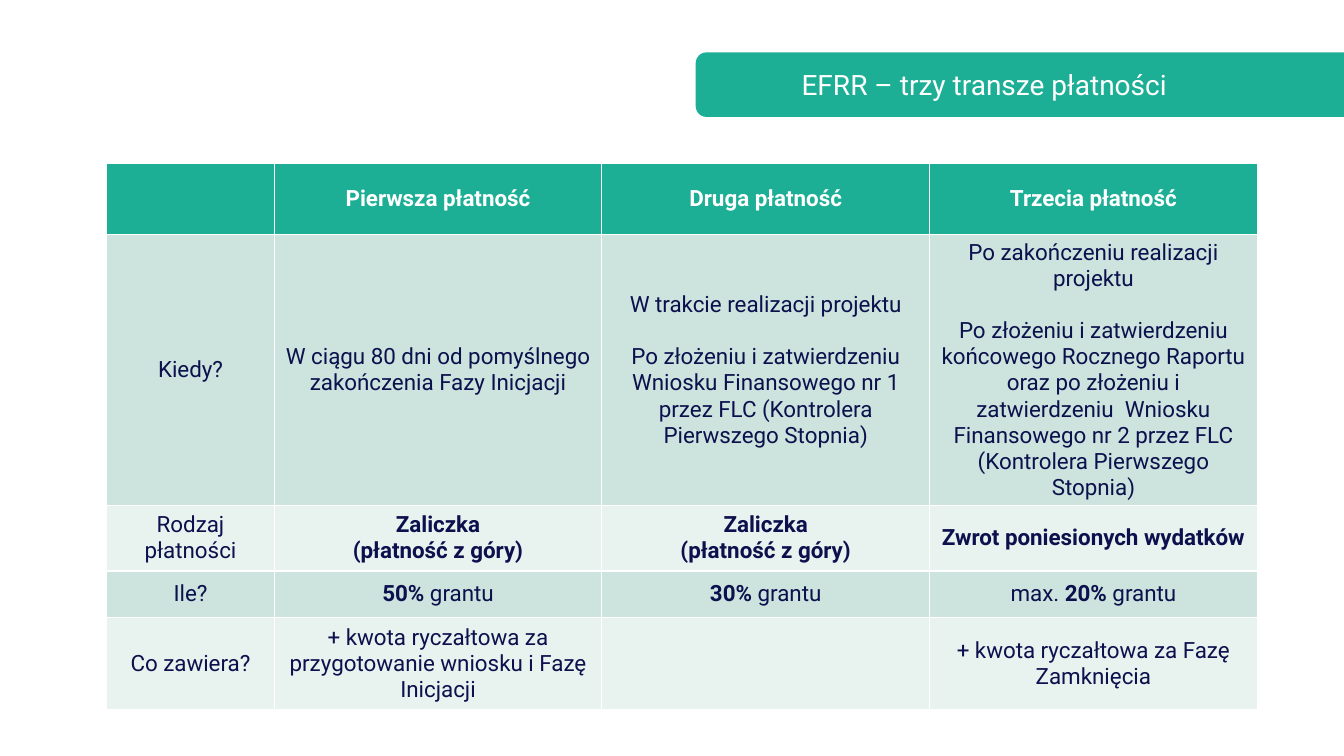
from pptx import Presentation
from pptx.dml.color import RGBColor
from pptx.enum.shapes import MSO_SHAPE
from pptx.enum.text import MSO_ANCHOR, PP_ALIGN
from pptx.util import Inches, Pt

GREEN = RGBColor(0x1C, 0xAF, 0x96)
MINT = RGBColor(0xCD, 0xE3, 0xDD)
PALE = RGBColor(0xE8, 0xF2, 0xEF)
NAVY = RGBColor(0x0C, 0x11, 0x4D)
WHITE = RGBColor(0xFF, 0xFF, 0xFF)
FONT = "Roboto"

TITLE = "EFRR – trzy transze płatności"
COLUMN_WIDTHS = [1.66, 3.25, 3.25, 3.25]
ROW_HEIGHTS = [0.71, 2.67, 0.65, 0.46, 0.92]
ADVANCE = ["**Zaliczka**", "**(płatność z góry)**"]
PARAGRAPH_GAP = Pt(18.75)
ROWS = [
    [[], ["**Pierwsza płatność**"], ["**Druga płatność**"], ["**Trzecia płatność**"]],
    [
        ["Kiedy?"],
        ["W ciągu 80 dni od pomyślnego zakończenia Fazy Inicjacji"],
        [
            "W trakcie realizacji projektu",
            "Po złożeniu i zatwierdzeniu Wniosku Finansowego nr 1 "
            "przez FLC (Kontrolera Pierwszego Stopnia)",
        ],
        [
            "Po zakończeniu realizacji projektu",
            "Po złożeniu i zatwierdzeniu końcowego Rocznego Raportu "
            "oraz po złożeniu i zatwierdzeniu  Wniosku Finansowego nr 2 "
            "przez FLC (Kontrolera Pierwszego Stopnia)",
        ],
    ],
    [["Rodzaj płatności"], ADVANCE, ADVANCE, ["**Zwrot poniesionych wydatków**"]],
    [["Ile?"], ["**50%** grantu"], ["**30%** grantu"], ["max. **20%** grantu"]],
    [
        ["Co zawiera?"],
        ["+ kwota ryczałtowa za przygotowanie wniosku i Fazę Inicjacji"],
        [],
        ["+ kwota ryczałtowa za Fazę Zamknięcia"],
    ],
]


def set_font(p, size, color):
    p.font.name = FONT
    p.font.size = Pt(size)
    p.font.color.rgb = color


def add_marked_runs(p, text):
    for i, part in enumerate(text.split("**")):
        if part:
            r = p.add_run()
            r.text = part
            r.font.bold = i % 2 == 1


def add_banner(slide):
    left, top, height = Inches(6.9), Inches(0.52), Inches(0.64)
    sp = slide.shapes.add_shape(
        MSO_SHAPE.ROUNDED_RECTANGLE, left, top, Inches(6.82), height
    )
    sp.shadow.inherit = False
    sp.fill.solid()
    sp.fill.fore_color.rgb = GREEN
    sp.line.fill.background()

    title = slide.shapes.title
    slide.shapes._spTree.append(title._element)
    title.left, title.top = Inches(7.95), top
    title.width, title.height = Inches(5.2), height
    tf = title.text_frame
    tf.margin_left = tf.margin_right = 0
    tf.vertical_anchor = MSO_ANCHOR.MIDDLE
    tf.text = TITLE
    p = tf.paragraphs[0]
    p.alignment = PP_ALIGN.LEFT
    set_font(p, 20, WHITE)


def fill_cell(cell, texts, fill, color, gap):
    cell.fill.solid()
    cell.fill.fore_color.rgb = fill
    cell.vertical_anchor = MSO_ANCHOR.MIDDLE
    tf = cell.text_frame
    for i, text in enumerate(texts):
        p = tf.add_paragraph() if i else tf.paragraphs[0]
        p.alignment = PP_ALIGN.CENTER
        if i and gap:
            p.space_before = gap
        set_font(p, 16, color)
        add_marked_runs(p, text)


def add_payment_table(slide):
    table = slide.shapes.add_table(
        len(ROWS), len(COLUMN_WIDTHS), Inches(1.06), Inches(1.62),
        Inches(sum(COLUMN_WIDTHS)), Inches(sum(ROW_HEIGHTS)),
    ).table
    table.horz_banding = False
    for column, width in zip(table.columns, COLUMN_WIDTHS):
        column.width = Inches(width)
    for i, (row, height, cells) in enumerate(zip(table.rows, ROW_HEIGHTS, ROWS)):
        row.height = Inches(height)
        fill = GREEN if i == 0 else MINT if i % 2 else PALE
        color = NAVY if i else WHITE
        gap = PARAGRAPH_GAP if i == 1 else None
        for cell, texts in zip(row.cells, cells):
            fill_cell(cell, texts, fill, color, gap)


def main():
    prs = Presentation()
    prs.slide_width, prs.slide_height = Inches(13.33), Inches(7.5)
    slide = prs.slides.add_slide(prs.slide_layouts[5])
    add_payment_table(slide)
    add_banner(slide)
    prs.save("out.pptx")


if __name__ == "__main__":
    main()
